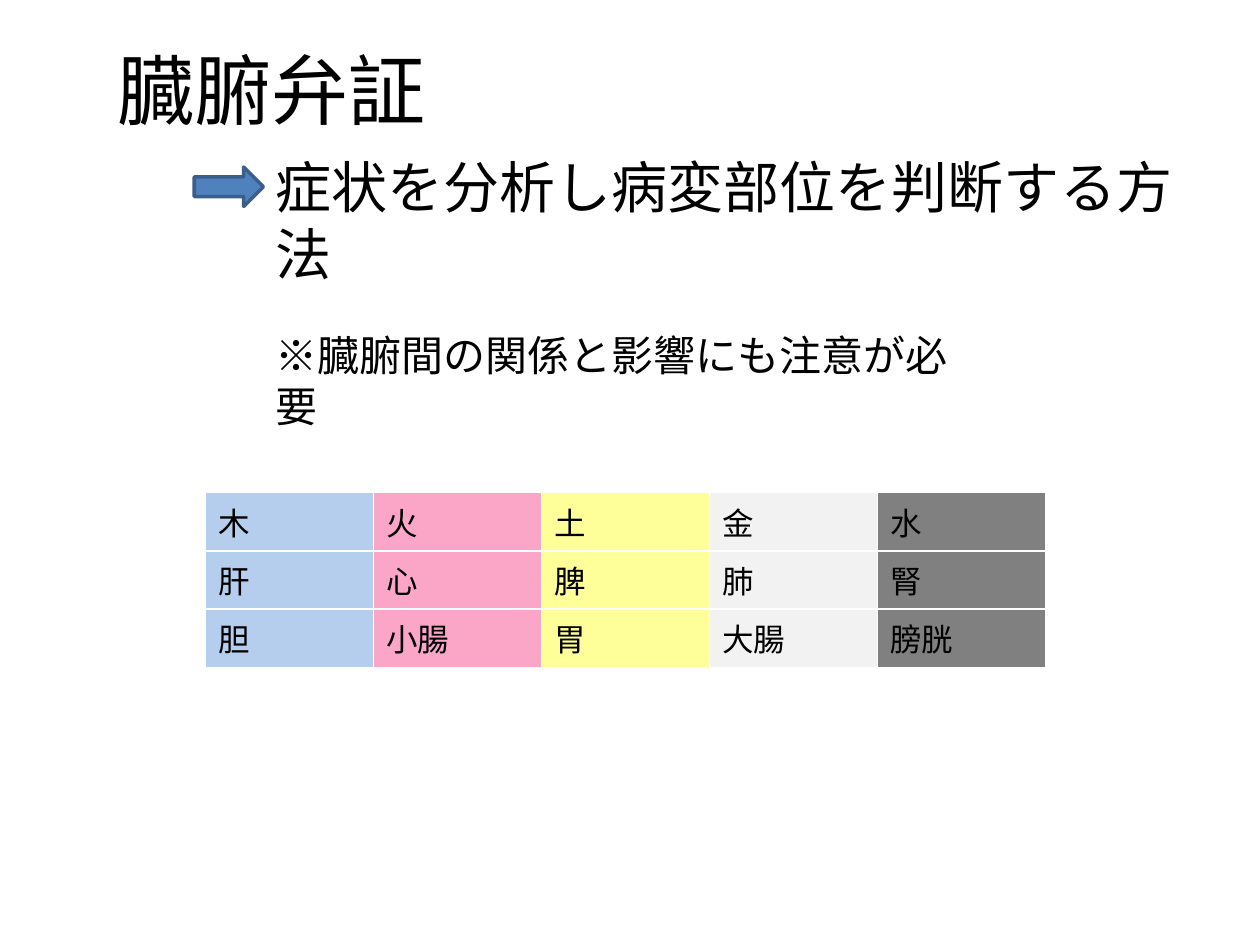
from pptx import Presentation
from pptx.dml.color import RGBColor
from pptx.enum import shapes, text
from pptx.util import Pt


def color(code):
    return RGBColor.from_string(code)


def style(para, size):
    look = {"name": "Calibri", "size": Pt(size), "bold": False}
    for key, val in look.items():
        setattr(para.font, key, val)
    para.font.color.rgb = color("000000")


deck = Presentation()
deck.slide_width, deck.slide_height = Pt(720), Pt(540)
slide = deck.slides.add_slide(deck.slide_layouts[6])

# Title, definition and note: left, top, width, height, font size
lines = [
    ("臓腑弁証", 60, 21, 192, 60.5, 44),
    ("症状を分析し病変部位を判断する方法", 150.5, 83.5, 541.5, 46, 32),
    ("※臓腑間の関係と影響にも注意が必要", 150.5, 185, 414.5, 36, 24),
]
for words, left, top, wide, high, size in lines:
    box = slide.shapes.add_textbox(Pt(left), Pt(top), Pt(wide), Pt(high))
    frame = box.text_frame
    form = {"word_wrap": True, "auto_size": text.MSO_AUTO_SIZE.NONE,
            "text": words}
    for key, val in form.items():
        setattr(frame, key, val)
    style(frame.paragraphs[0], size)

# Arrow before the definition
arrow = slide.shapes.add_shape(shapes.MSO_SHAPE.RIGHT_ARROW,
                               Pt(111), Pt(95.5), Pt(39.5), Pt(22.5))
arrow.shadow.inherit = False
arrow.fill.solid()
arrow.fill.fore_color.rgb = color("4F81BD")
arrow.line.color.rgb = color("3A5F8C")
arrow.line.width = Pt(2)

# Five elements with their organs, one colour a column
rows = [
    ["木", "火", "土", "金", "水"],
    ["肝", "心", "脾", "肺", "腎"],
    ["胆", "小腸", "胃", "大腸", "膀胱"],
]
fills = ["B5CEED", "FCA6C7", "FFFF99", "F2F2F2", "808080"]
wide, high = 96, 29.2
grid = slide.shapes.add_table(len(rows), len(fills), Pt(117.5), Pt(281.5),
                              Pt(wide * len(fills)),
                              Pt(high * len(rows))).table
for r, row in enumerate(rows):
    for c, word in enumerate(row):
        cell = grid.cell(r, c)
        cell.text = word
        cell.fill.solid()
        cell.fill.fore_color.rgb = color(fills[c])
        style(cell.text_frame.paragraphs[0], 18)

deck.save("out.pptx")
